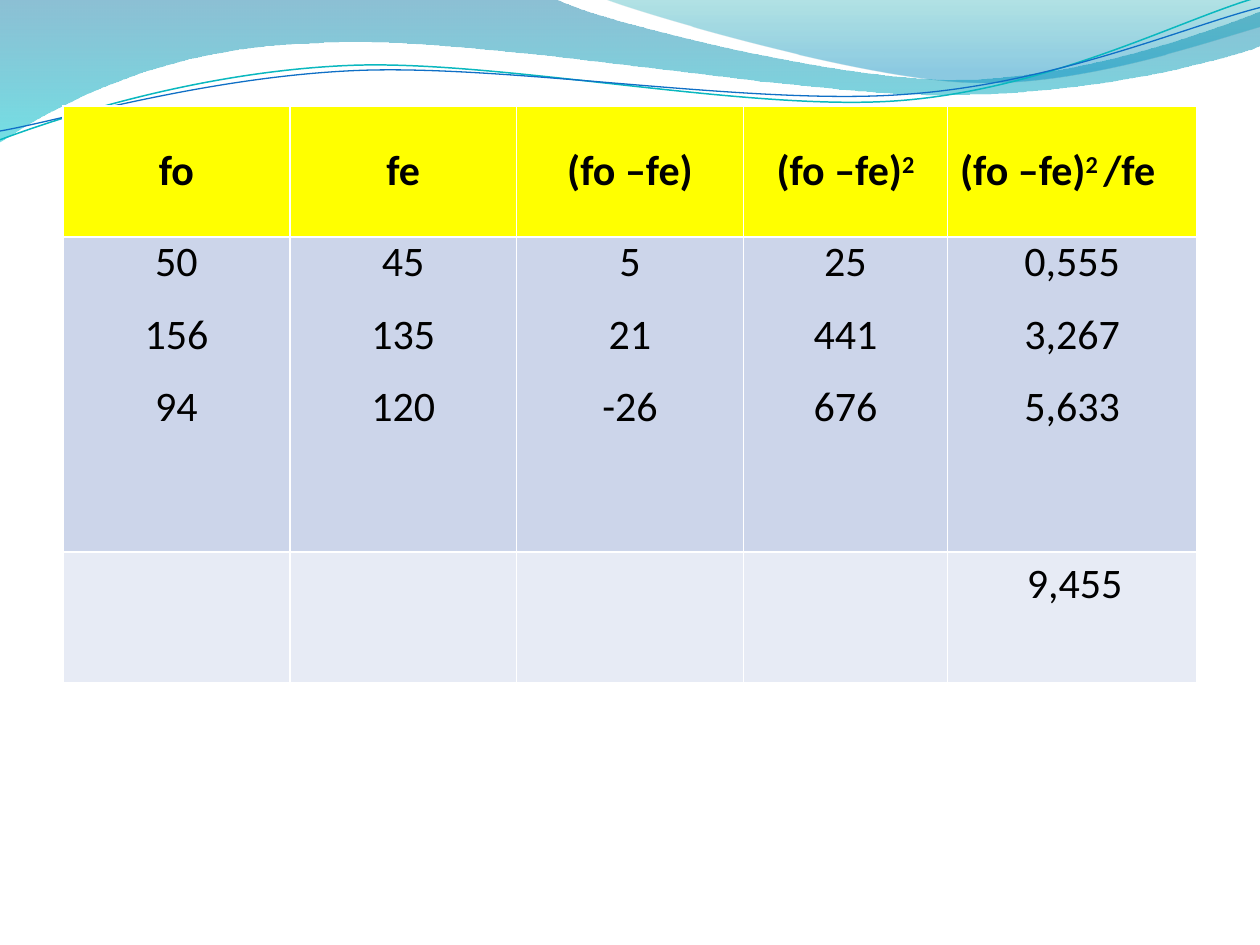
from lxml.etree import SubElement
from pptx import Presentation
from pptx.dml.color import RGBColor
from pptx.enum.text import MSO_ANCHOR, PP_ALIGN
from pptx.oxml.ns import qn
from pptx.util import Inches, Pt

# Each outline is a start point, then lines (2 numbers) and Bézier curves (6 numbers).
BROAD_WAVE = [
    (0, 0), (4.4, -0.01), (4.76, 0.17, 6.64, 0.63, 7.58, 0.63),
    (8.53, 0.63, 9.58, 0.26, 10, 0.09), (10.01, 0.36),
    (9.83, 0.44, 8.7, 0.76, 7.46, 0.75), (6.22, 0.75, 3.82, 0.28, 2.57, 0.34),
    (1.29, 0.36, 0.46, 0.83, -0.01, 1.13), (0, 0),
]
RIGHT_WAVE = [
    (4.79, -0.01), (5.09, 0.11, 6.82, 0.62, 7.69, 0.65),
    (8.56, 0.69, 9.61, 0.32, 10, 0.21), (10, 0), (4.79, -0.01),
]
TEAL_LINE = [
    (0, 1.11), (0.48, 0.93, 1.58, 0.57, 2.77, 0.52),
    (3.95, 0.47, 5.93, 0.89, 7.13, 0.8), (8.33, 0.71, 9.38, 0.15, 9.98, -0.02),
]
BLUE_LINE = [
    (0, 1.04), (0.47, 0.96, 1.64, 0.61, 2.83, 0.56),
    (4.03, 0.51, 5.97, 0.84, 7.17, 0.75), (8.36, 0.67, 9.41, 0.21, 10, 0.06),
]

# A header is a list of (text, is superscript) runs.
HEADERS = [
    [("fo", False)],
    [("fe", False)],
    [("(fo –fe)", False)],
    [("(fo –fe)", False), ("2", True)],
    [("(fo –fe)", False), ("2 ", True), ("/fe", False)],
]
DATA = [
    ["50", "156", "94"],
    ["45", "135", "120"],
    ["5", "21", "-26"],
    ["25", "441", "676"],
    ["0,555", "3,267", "5,633"],
]
TOTAL = "9,455"
COL_WIDTHS = [1.8, 1.8, 1.8, 1.62, 1.98]
ROW_HEIGHTS = [1.04, 2.5, 1.04]
ROW_FILLS = ["FFFF00", "CCD5EA", "E7EBF5"]
CENTERED = {"alignment": PP_ALIGN.CENTER, "space_before": Pt(6), "space_after": Pt(6)}
NARROW = {"margin_left": Inches(0.07), "margin_right": Inches(0.07),
          "margin_top": 0, "margin_bottom": 0}


def rgb(value):
    return RGBColor.from_string(value)


def apply(obj, formats):
    for name, value in formats.items():
        setattr(obj, name, value)


def add_outline(slide, outline, close):
    """Build a freeform through all points, then join each curve's three lines."""
    points = [(Inches(x), Inches(y)) for seg in outline
              for x, y in zip(seg[::2], seg[1::2])]
    builder = slide.shapes.build_freeform(*points[0])
    builder.add_line_segments(points[1:], close=close)
    sp = builder.convert_to_shape()
    sp.shadow.inherit = False
    lines = iter(list(sp._element.iter(qn("a:lnTo"))))
    for seg in outline[1:]:
        first = next(lines)
        if len(seg) == 6:
            curve = first.makeelement(qn("a:cubicBezTo"))
            first.addprevious(curve)
            for line in (first, next(lines), next(lines)):
                curve.append(line[0])
                line.getparent().remove(line)
    return sp


def add_wave(slide, outline, stops):
    """Draw a filled wave; stops are (position, colour, opacity in percent)."""
    sp = add_outline(slide, outline, True)
    sp.line.fill.background()
    sp.fill.gradient()
    sp.fill.gradient_angle = 270
    for stop, (position, color, _) in zip(sp.fill.gradient_stops, stops):
        stop.position = position
        stop.color.rgb = rgb(color)
    for clr, (_, _, opacity) in zip(sp._element.spPr.iter(qn("a:srgbClr")), stops):
        SubElement(clr, qn("a:alpha"), val=str(opacity * 1000))


def add_wave_line(slide, outline, color, width):
    sp = add_outline(slide, outline, False)
    sp.fill.background()
    sp.line.color.rgb = rgb(color)
    sp.line.width = Pt(width)


def add_run(p, text, bold=False, superscript=False):
    r = p.add_run()
    r.text = text
    apply(r.font, {"name": "Calibri", "size": Pt(24), "bold": bold})
    r.font.color.rgb = rgb("000000")
    if superscript:
        r.font._element.set("baseline", "30000")


def fill_header(cell, runs, formats):
    cell.vertical_anchor = MSO_ANCHOR.MIDDLE
    p = cell.text_frame.paragraphs[0]
    apply(p, formats)
    for text, superscript in runs:
        add_run(p, text, True, superscript)


def fill_data(cell, values):
    apply(cell, NARROW)
    tf = cell.text_frame
    for i, value in enumerate(values):
        p = tf.add_paragraph() if i else tf.paragraphs[0]
        apply(p, CENTERED)
        add_run(p, value)


def add_frequency_table(slide):
    frame = slide.shapes.add_table(len(ROW_HEIGHTS), len(COL_WIDTHS), Inches(0.5),
                                   Inches(0.84), Inches(9), Inches(sum(ROW_HEIGHTS)))
    table = frame.table
    for col, width in zip(table.columns, COL_WIDTHS):
        col.width = Inches(width)
    for row, height, color in zip(table.rows, ROW_HEIGHTS, ROW_FILLS):
        row.height = Inches(height)
        for cell in row.cells:
            cell.fill.solid()
            cell.fill.fore_color.rgb = rgb(color)

    last = len(HEADERS) - 1
    for c, (runs, values) in enumerate(zip(HEADERS, DATA)):
        header = table.cell(0, c)
        if c < last:
            apply(header, NARROW)
        fill_header(header, runs, CENTERED if c < last else {})
        fill_data(table.cell(1, c), values)
    total = table.cell(2, last)
    total.margin_left = Inches(0.63)
    add_run(total.text_frame.paragraphs[0], TOTAL)


def main():
    prs = Presentation()
    apply(prs, {"slide_width": Inches(10), "slide_height": Inches(7.5)})
    slide = prs.slides.add_slide(prs.slide_layouts[6])
    add_wave(slide, BROAD_WAVE, [(0, "0074A1", 45), (1, "00C6CF", 55)])
    add_wave(slide, RIGHT_WAVE, [(0, "00A1A9", 30), (0.8, "008BBF", 45)])
    add_wave_line(slide, TEAL_LINE, "0AB8BF", 0.85)
    add_wave_line(slide, BLUE_LINE, "0F6FC6", 0.75)
    add_frequency_table(slide)
    prs.save("out.pptx")


if __name__ == "__main__":
    main()
